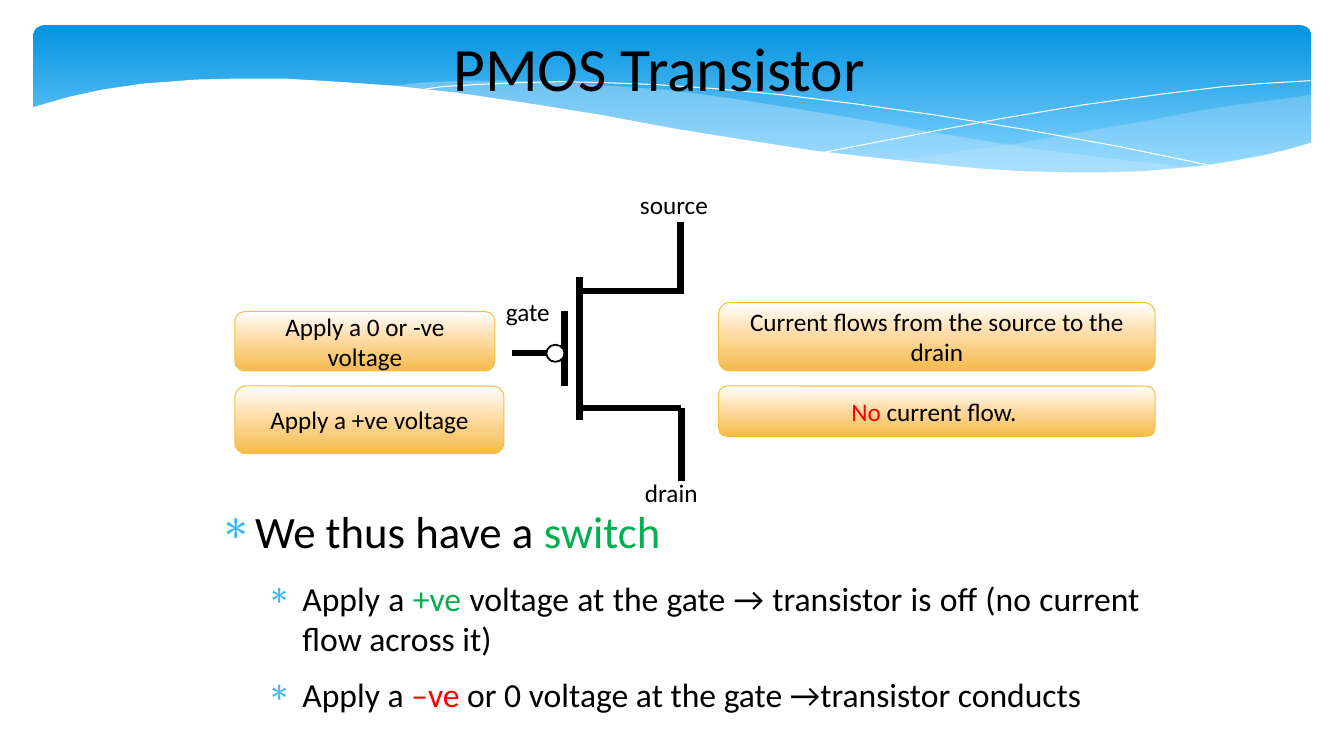
import pptx
import pptx.util
import pptx.dml.color
import pptx.enum.shapes
import pptx.enum.text
import pptx.oxml
import pptx.oxml.ns
import lxml.etree

RGBColor = pptx.dml.color.RGBColor
BLACK = RGBColor(0x00, 0x00, 0x00)
WHITE = RGBColor(0xFF, 0xFF, 0xFF)
RED = RGBColor(0xFF, 0x00, 0x00)
GREEN = RGBColor(0x00, 0xB0, 0x50)
SKY = RGBColor(0x31, 0xB6, 0xFD)
PALE = RGBColor(0xC6, 0xE7, 0xFC)
GOLD = RGBColor(0xF5, 0xC0, 0x40)
BANNER_STOPS = [(0, RGBColor(0x02, 0x93, 0xE0)), (90, RGBColor(0x83, 0xD3, 0xFE))]
LABEL_STOPS = [(0, WHITE), (44, RGBColor(0xFF, 0xDD, 0xAA)), (100, RGBColor(0xF4, 0xBB, 0x4A))]

SHAPE = pptx.enum.shapes.MSO_SHAPE
ALIGN = pptx.enum.text.PP_ALIGN
ANCHOR = pptx.enum.text.MSO_ANCHOR
Pt = pptx.util.Pt
qn = pptx.oxml.ns.qn

COLUMNS, ROWS = 133.33, 75
CELL = pptx.util.Inches(0.1)

RIGHT_BAND = [
    (130.1, 9.4), (126.5, 9.9), (122.7, 10.4), (118.8, 11), (114.7, 11.8), (107.3, 13.1),
    (100.5, 14.3), (94.1, 15.2), (88.2, 16), (92.1, 16.4), (95.8, 16.7), (100.9, 17),
    (105.6, 17.2), (111.3, 17.2), (116.3, 16.9), (120.7, 16.3), (124.7, 15.6), (128.4, 14.7),
    (130.1, 14.2)]
MIDDLE_BAND = [
    (119, 16.7), (111.6, 15.9), (103.4, 14.9), (94.1, 13.4), (83.9, 11.6), (77.8, 10.6),
    (72.1, 9.7), (66.9, 9), (61.9, 8.6), (56, 8.2), (50.6, 8), (45.9, 8), (41.8, 8.2),
    (38.2, 8.6), (43.1, 9), (48.3, 9.7), (53.9, 10.6), (59.9, 11.6), (70.6, 13.5),
    (80.2, 15), (88.7, 16.1), (96.3, 16.8), (103, 17.2), (109, 17.3), (114.3, 17.1)]
FALLING_CURVE = [
    (41.2, 9), (43.8, 8.6), (47, 8.4), (51.6, 8.2), (55.5, 8.1), (60, 8.2), (65.2, 8.4),
    (71, 8.8), (77.5, 9.4), (84.8, 10.3), (92.7, 11.4), (101.4, 12.8), (110.8, 14.5),
    (121, 16.6)]
RISING_CURVE = [
    (81.8, 15.1), (87, 14.1), (92.7, 13), (99.7, 11.7), (107.5, 10.4), (115.5, 9.3),
    (121.3, 8.6), (125, 8.3), (130, 8)]
WHITE_WAVE = [
    (3.1, 10.7), (4.8, 10.2), (6.9, 9.6), (10.1, 8.9), (14.2, 8.3), (19.4, 7.9),
    (23.5, 7.8), (28.2, 7.8), (33.3, 8.1), (39, 8.5), (45.3, 9.2), (52.1, 10.2),
    (59.6, 11.4), (67.1, 12.8), (74, 13.9), (80.4, 14.9), (86.3, 15.6), (91.8, 16.2),
    (96.9, 16.7), (101.5, 17), (105.8, 17.1), (109.7, 17.1), (113.4, 17), (116.7, 16.7),
    (119.8, 16.4), (122.7, 15.9), (125.4, 15.4), (127.9, 14.8), (130.3, 14.1),
    (130.3, 22.4), (3.1, 22.4)]


def cells(*counts):
    return [pptx.util.Emu(round(count * CELL)) for count in counts]


def apply_format(target, values):
    for name, value in values.items():
        setattr(target, name, value)


class SlideBuilder:
    font_name = "Calibri"

    def __init__(self, deck):
        self.page = deck.slides.add_slide(deck.slide_layouts[6])

    def finish(self, shape, fill=None, stops=None, line=None, width=0, opacity=None):
        shape.shadow.inherit = False
        if stops:
            shape.fill.gradient()
            shape.fill.gradient_angle = 270
            stop_list = shape.element.spPr.find(qn("a:gradFill")).find(qn("a:gsLst"))
            for stop in list(stop_list):
                stop_list.remove(stop)
            for position, color in stops:
                stop = lxml.etree.SubElement(stop_list, qn("a:gs"), pos=str(position * 1000))
                lxml.etree.SubElement(stop, qn("a:srgbClr"), val=str(color))
        elif fill is not None:
            shape.fill.solid()
            shape.fill.fore_color.rgb = fill
            if opacity:
                color = shape.element.spPr.find(qn("a:solidFill"))[0]
                lxml.etree.SubElement(color, qn("a:alpha"), val=str(opacity * 1000))
        else:
            shape.fill.background()
        if line is None:
            shape.line.fill.background()
        else:
            shape.line.color.rgb = line
            shape.line.width = Pt(width)
        return shape

    def shape(self, kind, place, **style):
        return self.finish(self.page.shapes.add_shape(kind, *cells(*place)), **style)

    def curve(self, points, close=True, **style):
        corners = [cells(*point) for point in points]
        builder = self.page.shapes.build_freeform(*corners[0])
        builder.add_line_segments(corners[1:], close=close)
        return self.finish(builder.convert_to_shape(), **style)

    def wire(self, *ends):
        wire = self.page.shapes.add_connector(
            pptx.enum.shapes.MSO_CONNECTOR.STRAIGHT, *cells(*ends))
        wire.line.color.rgb = BLACK
        wire.line.width = Pt(4.5)
        lxml.etree.SubElement(wire.element.spPr, qn("a:effectLst"))

    def fill_para(self, para, spans, size, **values):
        apply_format(para, values)
        for text, color in spans:
            span = para.add_run()
            span.text = text
            apply_format(span.font, {"name": self.font_name, "size": Pt(size)})
            span.font.color.rgb = color

    def text(self, place, words, size=18, wrap=False, align=ALIGN.LEFT):
        box = self.page.shapes.add_textbox(*cells(*place))
        box.text_frame.word_wrap = wrap
        self.fill_para(box.text_frame.paragraphs[0], [(words, BLACK)], size, alignment=align)

    def label(self, place, spans):
        box = self.shape(SHAPE.ROUNDED_RECTANGLE, place, stops=LABEL_STOPS, line=GOLD, width=0.75)
        apply_format(box.text_frame, {"word_wrap": True, "vertical_anchor": ANCHOR.MIDDLE})
        self.fill_para(box.text_frame.paragraphs[0], spans, 18, alignment=ALIGN.CENTER)

    def bullets(self, place, items):
        frame = self.page.shapes.add_textbox(*cells(*place)).text_frame
        apply_format(frame, {"word_wrap": True, "margin_left": 0, "margin_top": 0,
                             "margin_right": 0, "margin_bottom": 0})
        for index, (level, size, after, spans) in enumerate(items):
            para = frame.add_paragraph() if index else frame.paragraphs[0]
            self.fill_para(para, spans, size, level=level, space_after=Pt(after),
                           alignment=ALIGN.JUSTIFY)
            layout = para._p.get_or_add_pPr()
            layout.set("marL", str(cells(4.7 * (level + 1))[0]))
            layout.set("indent", str(cells(-3.5)[0]))
            color = lxml.etree.SubElement(layout, qn("a:buClr"))
            lxml.etree.SubElement(color, qn("a:srgbClr"), val=str(SKY))
            lxml.etree.SubElement(layout, qn("a:buFont"), typeface="Symbol")
            lxml.etree.SubElement(layout, qn("a:buChar"), char="∗")


def main():
    deck = pptx.Presentation()
    deck.slide_width, deck.slide_height = cells(COLUMNS, ROWS)
    slide = SlideBuilder(deck)

    banner = slide.shape(SHAPE.ROUNDED_RECTANGLE, (3.3, 2.5, 126.8, 15.6), stops=BANNER_STOPS)
    banner.adjustments[0] = 0.07
    slide.curve(RIGHT_BAND, fill=PALE, opacity=29)
    slide.curve(MIDDLE_BAND, fill=PALE, opacity=40)
    for points in (FALLING_CURVE, RISING_CURVE):
        slide.curve(points, close=False, line=WHITE)
    slide.curve(WHITE_WAVE, fill=WHITE)

    slide.text((18.3, 2.5, 94.2, 8.4), "PMOS Transistor", size=44, wrap=True, align=ALIGN.CENTER)

    for place, spans in [
        ((23.3, 30.9, 25.8, 5.9), [("Apply a 0 or -ve voltage", BLACK)]),
        ((71.3, 30, 43.3, 6.8), [("Current flows from the source to the drain", BLACK)]),
        ((23.3, 38.3, 26.7, 6.7), [("Apply a +ve voltage", BLACK)]),
        ((71.3, 38.3, 43.3, 5), [("No", RED), (" current flow. ", BLACK)]),
    ]:
        slide.label(place, spans)

    for place, words in [((62.5, 18.3, 9.2, 4), "source"), ((63, 46.9, 7.5, 4), "drain"),
                         ((49.2, 28.9, 6.8, 4), "gate")]:
        slide.text(place, words)

    slide.bullets((20.6, 50, 92.5, 22.8), [
        (0, 32, 14.1, [("We thus have a ", BLACK), ("switch", GREEN)]),
        (1, 24, 11.3, [
            ("Apply a ", BLACK), ("+ve ", GREEN),
            ("voltage at the gate → transistor is off (no current flow across it)", BLACK)]),
        (1, 24, 11.3, [
            ("Apply a ", BLACK), ("–ve ", RED),
            ("or 0 voltage at the gate →transistor conducts", BLACK)]),
    ])

    for ends in [(50.8, 35, 56, 35), (56, 30.9, 56, 38.3), (57.5, 27.5, 57.5, 41.7),
                 (57.5, 28.9, 67.6, 28.9), (57.5, 40.5, 67.6, 40.5),
                 (67.6, 40.5, 67.6, 47.7), (67.5, 22, 67.5, 29.2)]:
        slide.wire(*ends)
    slide.shape(SHAPE.OVAL, (54.2, 34.2, 1.8, 1.7), fill=WHITE, line=BLACK, width=1.25)

    deck.save("out.pptx")


if __name__ == "__main__":
    main()
